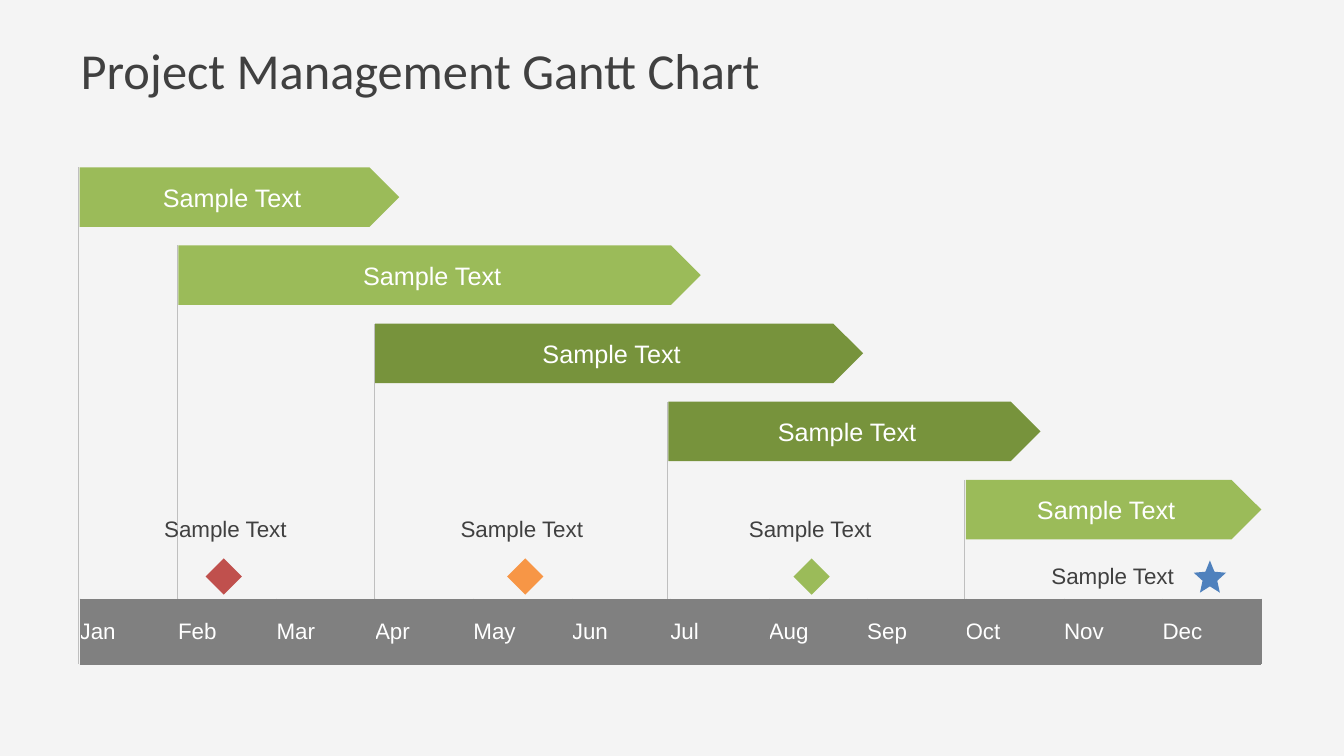
from lxml.etree import SubElement
from pptx import Presentation
from pptx.dml.color import RGBColor
from pptx.enum.shapes import MSO_CONNECTOR, MSO_SHAPE as SHAPE
from pptx.enum.text import MSO_ANCHOR as ANCHOR, MSO_AUTO_SIZE as AUTO_SIZE, PP_ALIGN as ALIGN
from pptx.oxml.ns import qn
from pptx.util import Inches, Pt

GREEN, DARK_GREEN, GREY, TEXT_GREY, WHITE = "9BBB59", "77933C", "808080", "404040", "FFFFFF"
MONTHS = "Jan Feb Mar Apr May Jun Jul Aug Sep Oct Nov Dec".split()
TASKS = [(0, 3.17, GREEN), (0.98, 5.18, GREEN), (2.93, 4.84, DARK_GREEN),
         (5.84, 3.69, DARK_GREEN), (8.79, 2.93, GREEN)]
MILESTONES = [
    (SHAPE.DIAMOND, 1.25, 0.48, 0.36, "C0504D", 0.74, 0),
    (SHAPE.DIAMOND, 4.24, 0.48, 0.36, "F79646", 3.68, 0),
    (SHAPE.DIAMOND, 7.08, 0.48, 0.36, GREEN, 6.54, 0),
    (SHAPE.STAR_5_POINT, 11.05, 0.5, 0.32, "4F81BD", 9.54, 0.47),
]


def color(hex_string):
    """Turn a hex string into a colour."""
    return RGBColor.from_string(hex_string)


def write(frame, text, size, ink, align=ALIGN.LEFT, font="Arial"):
    """Add one formatted run to the first paragraph of a frame."""
    paragraph = frame.paragraphs[0]
    paragraph.alignment = align
    run = paragraph.add_run()
    run.text = text
    run.font.name, run.font.size = font, Pt(size)
    run.font.color.rgb = color(ink)


def add_filled(slide, kind, left, top, width, height, fill):
    """Add a flat, unlined shape at a place in inches."""
    shape = slide.shapes.add_shape(kind, *map(Inches, (left, top, width, height)))
    shape.shadow.inherit = False
    shape.fill.solid()
    shape.fill.fore_color.rgb = color(fill)
    shape.line.fill.background()
    return shape


def add_backdrop(slide, width, height):
    """Lay a translucent grey sheet behind everything."""
    sheet = add_filled(slide, SHAPE.RECTANGLE, 0, 0, width, height, "D9D9D9")
    tint = sheet._element.spPr.find(qn("a:solidFill"))[0]
    SubElement(tint, qn("a:alpha"), val="28000")
    slide.shapes._spTree.insert(2, sheet._element)


def add_title(slide, left, top, width, height):
    """Place and format the title."""
    title = slide.shapes.title
    title.left, title.top, title.width, title.height = map(Inches, (left, top, width, height))
    frame = title.text_frame
    frame.auto_size, frame.vertical_anchor = AUTO_SIZE.NONE, ANCHOR.MIDDLE
    frame.margin_left = frame.margin_right = Inches(0.13)
    frame.margin_top = frame.margin_bottom = Inches(0.07)
    write(frame, "Project Management Gantt Chart", 36, TEXT_GREY, font="Calibri")


def add_tasks(slide, left, top, bottom):
    """Draw the stepped task bars and their start lines down to the bottom."""
    pitch = 0.775
    for row, (start, length, fill) in enumerate(TASKS):
        bar_left, bar_top = left + start, top + row * pitch
        bar = add_filled(slide, SHAPE.PENTAGON, bar_left, bar_top, length, 0.59, fill)
        bar.text_frame.vertical_anchor = ANCHOR.MIDDLE
        write(bar.text_frame, "Sample Text", 18, WHITE, ALIGN.CENTER)
        line_x = bar_left - 0.01
        start_line = slide.shapes.add_connector(
            MSO_CONNECTOR.STRAIGHT, *map(Inches, (line_x, bottom, line_x, bar_top)))
        start_line.line.color.rgb = color("BFBFBF")
        start_line.line.width = Pt(0.75)
        SubElement(start_line._element.spPr, qn("a:effectLst"))


def add_cell_borders(cell, hex_string, width):
    """Draw the four borders of a cell ahead of its fill."""
    properties = cell._tc.get_or_add_tcPr()
    for position, side in enumerate(("lnL", "lnR", "lnT", "lnB")):
        border = SubElement(properties, qn(f"a:{side}"), w=str(Pt(width)))
        SubElement(SubElement(border, qn("a:solidFill")), qn("a:srgbClr"), val=hex_string)
        properties.insert(position, border)


def add_months(slide, left, top, width, height):
    """Add the month band as a one-row table."""
    band = slide.shapes.add_table(
        1, len(MONTHS), *map(Inches, (left, top, width, height))).table
    band.first_row = band.horz_banding = False
    for column, month in enumerate(MONTHS):
        band.columns[column].width = Inches(width / len(MONTHS))
        cell = band.cell(0, column)
        cell.fill.solid()
        cell.fill.fore_color.rgb = color(GREY)
        cell.vertical_anchor = ANCHOR.MIDDLE
        cell.margin_left = cell.margin_right = cell.margin_top = cell.margin_bottom = 0
        add_cell_borders(cell, GREY, 0.25)
        write(cell.text_frame, month, 16, WHITE)


def add_milestones(slide, left, top):
    """Add the milestone markers and their labels."""
    for kind, x, y, size, fill, label_x, label_y in MILESTONES:
        marker = add_filled(slide, kind, left + x, top + y, size, size, fill)
        if kind == SHAPE.STAR_5_POINT:
            marker.adjustments[0] = 0.227
        label = slide.shapes.add_textbox(
            *map(Inches, (left + label_x, top + label_y, 1.43, 0.37)))
        label.text_frame.word_wrap = False
        label.text_frame.auto_size = AUTO_SIZE.SHAPE_TO_FIT_TEXT
        write(label.text_frame, "Sample Text", 16, TEXT_GREY)


def main():
    """Build and save the Gantt slide."""
    deck = Presentation()
    deck.slide_width, deck.slide_height = Inches(13.33), Inches(7.5)
    slide = deck.slides.add_slide(deck.slide_layouts[5])
    add_backdrop(slide, 13.33, 7.5)
    add_title(slide, 0.67, 0.3, 12, 0.78)
    add_tasks(slide, 0.79, 1.66, 6.59)
    add_months(slide, 0.79, 5.94, 11.72, 0.65)
    add_milestones(slide, 0.79, 5.06)
    deck.save("out.pptx")


if __name__ == "__main__":
    main()
